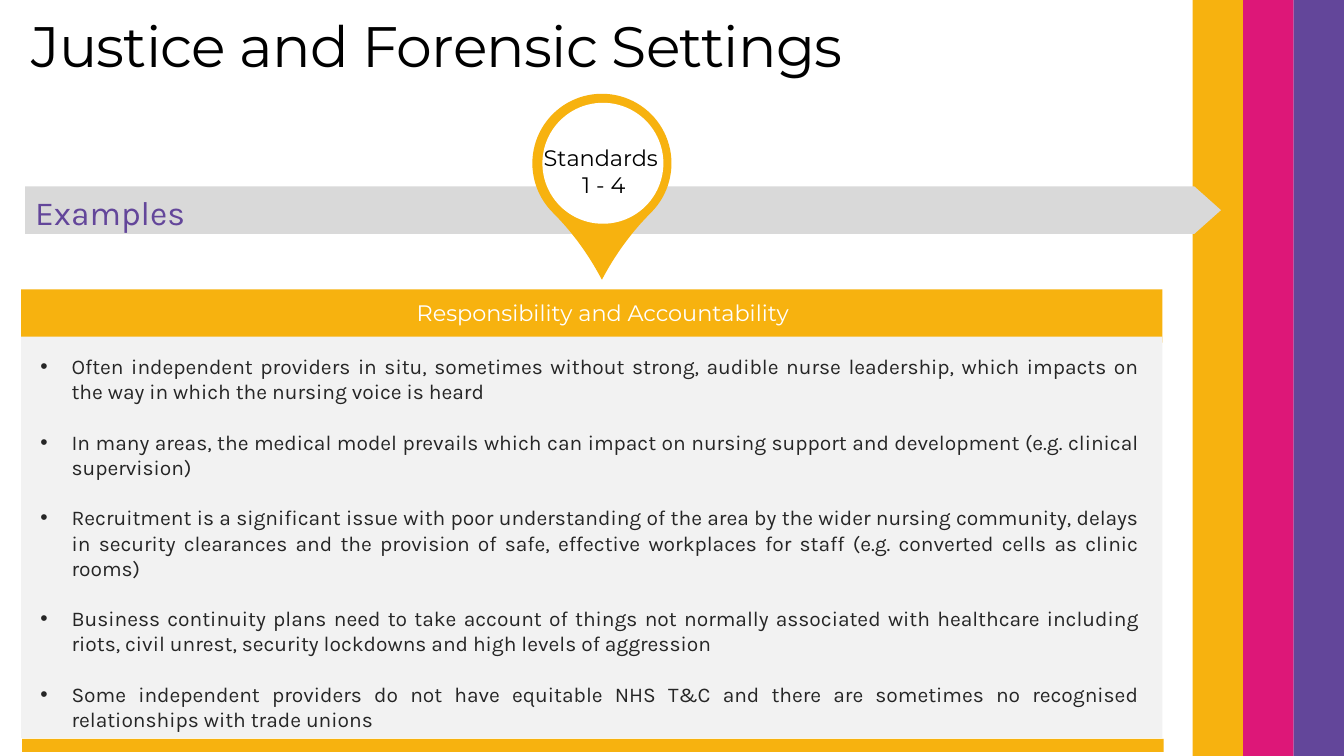
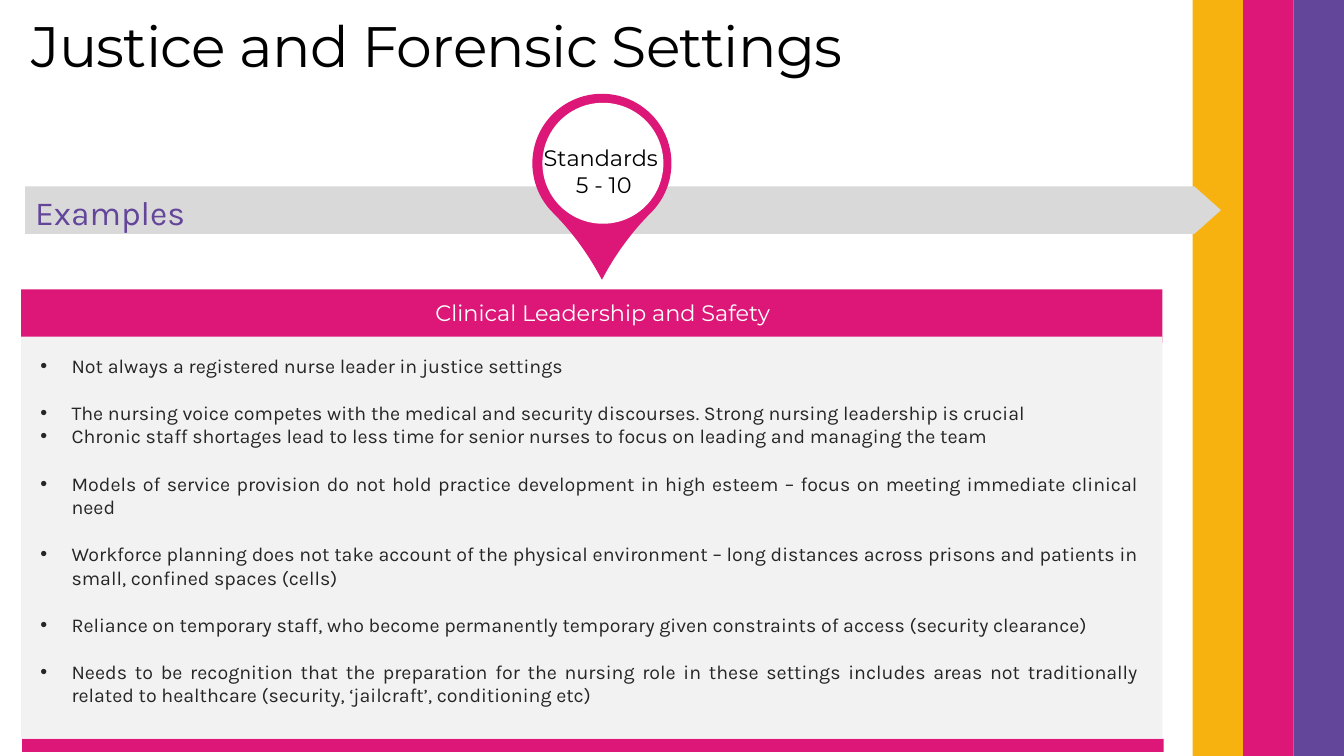
from pptx import Presentation
from pptx import util as u
from pptx.dml import color
from pptx.enum import shapes, text

COLORS = {
    "yellow": "F7B20F", "pink": "DD1778", "purple": "63469A",
    "arrow": "D9D9D9", "panel": "F2F2F2", "body": "262626",
    "black": "000000", "white": "FFFFFF",
}
HEADING_FONT, BODY_FONT = "Montserrat", "Karla"
TITLE = "Justice and Forensic Settings"

SLIDES = [
    {
        "accent": "yellow", "standards": " 1 - 4", "size": 15,
        "heading": "Responsibility and Accountability",
        "groups": [
            ["Often independent providers in situ, sometimes without strong, audible nurse leadership, "
             "which impacts on the way in which the nursing voice is heard"],
            ["In many areas, the medical model prevails which can impact on nursing support and "
             "development (e.g. clinical supervision)"],
            ["Recruitment is a significant issue with poor understanding of the area by the wider nursing "
             "community, delays in security clearances and the provision of safe, effective workplaces "
             "for staff (e.g. converted cells as clinic rooms)"],
            ["Business continuity plans need to take account of things not normally associated with "
             "healthcare including riots, civil unrest, security lockdowns and high levels of aggression"],
            ["Some independent providers do not have equitable NHS T&C and there are sometimes no "
             "recognised relationships with trade unions"],
        ],
    },
    {
        "accent": "pink", "standards": " 5 - 10", "size": 14,
        "heading": "Clinical Leadership and Safety",
        "groups": [
            ["Not always a registered nurse leader in justice settings"],
            ["The nursing voice competes with the medical and security discourses. "
             "Strong nursing leadership is crucial",
             "Chronic staff shortages lead to less time for senior nurses to focus on leading and "
             "managing the team"],
            ["Models of service provision do not hold practice development in high esteem – focus on "
             "meeting immediate clinical need"],
            ["Workforce planning does not take account of the physical environment – long distances "
             "across prisons and patients in small, confined spaces (cells)"],
            ["Reliance on temporary staff, who become permanently temporary given constraints of access "
             "(security clearance)"],
            ["Needs to be recognition that the preparation for the nursing role in these settings "
             "includes areas not traditionally related to healthcare (security, ‘jailcraft’, "
             "conditioning etc)"],
        ],
    },
]


def place(shape, left, top, width, height):
    """Move and size a shape, in inches."""
    shape.left, shape.top = u.Inches(left), u.Inches(top)
    shape.width, shape.height = u.Inches(width), u.Inches(height)


def add_block(slide, kind, box, fill):
    """Add a flat shape without outline or shadow."""
    shape = slide.shapes.add_shape(kind, *map(u.Inches, box))
    shape.shadow.inherit = False
    shape.fill.solid()
    shape.fill.fore_color.rgb = color.RGBColor.from_string(COLORS[fill])
    shape.line.fill.background()
    return shape


def add_run(paragraph, words, font, size, fill):
    """Add one formatted run to a paragraph."""
    run = paragraph.add_run()
    run.text = words
    run.font.name, run.font.size = font, u.Pt(size)
    run.font.color.rgb = color.RGBColor.from_string(COLORS[fill])
    return run


def next_paragraph(frame, index):
    """Return the first paragraph of a frame, or a new one after it."""
    return frame.add_paragraph() if index else frame.paragraphs[0]


def add_label(slide, box, lines, font, size, fill, align=text.PP_ALIGN.CENTER, wrap=False):
    """Add a text box with one paragraph per line."""
    frame = slide.shapes.add_textbox(*map(u.Inches, box)).text_frame
    frame.word_wrap = wrap
    for index, line in enumerate(lines):
        paragraph = next_paragraph(frame, index)
        paragraph.alignment = align
        add_run(paragraph, line, font, size, fill)
    return frame


def add_stripes(slide, left, top, width, height):
    """Draw the vertical colour stripes side by side."""
    names = ("yellow", "pink", "purple")
    stripe = width / len(names)
    for index, name in enumerate(names):
        box = (left + index * stripe, top, stripe, height)
        add_block(slide, shapes.MSO_SHAPE.RECTANGLE, box, name)


def add_title(slide, left, top, width, height):
    """Format the title placeholder."""
    title = slide.shapes.title
    place(title, left, top, width, height)
    frame = title.text_frame
    frame.auto_size = text.MSO_AUTO_SIZE.NONE
    frame.word_wrap = True
    frame.vertical_anchor = text.MSO_ANCHOR.BOTTOM
    paragraph = frame.paragraphs[0]
    paragraph.alignment = text.PP_ALIGN.LEFT
    paragraph.line_spacing = 0.8
    run = add_run(paragraph, TITLE, HEADING_FONT, 40.7, "black")
    run._r.get_or_add_rPr().set("spc", "-50")


def add_arrow(slide, left, top, width, height):
    """Draw the grey arrow with its label."""
    arrow = add_block(slide, shapes.MSO_SHAPE.RIGHT_ARROW, (left, top, width, height), "arrow")
    arrow.adjustments[0], arrow.adjustments[1] = 1, 0.56
    add_label(slide, (left, top, 1.76, 0.5), ["Examples"], BODY_FONT, 24, "purple",
              text.PP_ALIGN.LEFT)


def add_pin(slide, left, top, size, accent, standards):
    """Draw the map pin that names the standards."""
    drop = add_block(slide, shapes.MSO_SHAPE.TEAR, (left, top, size, size), accent)
    drop.adjustments[0] = 1.184
    drop.rotation = 135
    disc = size - 0.18
    add_block(slide, shapes.MSO_SHAPE.OVAL, (left + 0.1, top + 0.09, disc, disc), "white")
    frame = add_label(slide, (left, top + 0.45, size - 0.02, 0.64), ["Standards", standards],
                      HEADING_FONT, 16, "black")
    frame.vertical_anchor = text.MSO_ANCHOR.MIDDLE


def add_panel(slide, left, top, width, height, content):
    """Draw the headed panel and fill its list placeholder."""
    rectangle, accent = shapes.MSO_SHAPE.RECTANGLE, content["accent"]
    add_block(slide, rectangle, (left, top, width, 0.53), accent)
    add_block(slide, rectangle, (left, top + 0.47, width, height - 0.61), "panel")
    add_block(slide, rectangle, (left + 0.01, top + height - 0.13, width, 0.13), accent)
    add_label(slide, (left + 0.52, top + 0.05, 10.5, 0.37), [content["heading"]],
              HEADING_FONT, 16, "white", wrap=True)

    body = slide.placeholders[1]
    place(body, left + 0.09, top + 0.59, width - 0.22, height - 0.7)
    body.element.getparent().append(body.element)
    frame = body.text_frame
    frame.auto_size = text.MSO_AUTO_SIZE.NONE
    size = content["size"]
    items = [(item, group > 0 and place_in_group == 0)
             for group, members in enumerate(content["groups"])
             for place_in_group, item in enumerate(members)]
    for index, (item, gap) in enumerate(items):
        paragraph = next_paragraph(frame, index)
        paragraph.alignment = text.PP_ALIGN.JUSTIFY
        paragraph.space_before = u.Pt(1.2 * size if gap else 0)
        properties = paragraph._p.get_or_add_pPr()
        properties.set("marL", str(u.Inches(0.31)))
        properties.set("indent", str(-u.Inches(0.31)))
        add_run(paragraph, item, BODY_FONT, size, "body")


def add_standards_slide(presentation, content):
    """Build one slide of examples for a range of standards."""
    slide = presentation.slides.add_slide(presentation.slide_layouts[1])
    add_stripes(slide, 11.83, 0, 1.5, 7.5)
    add_title(slide, 0.21, 0.18, 10.6, 0.65)
    add_arrow(slide, 0.25, 1.85, 11.86, 0.47)
    add_pin(slide, 5.28, 0.93, 1.38, content["accent"], content["standards"])
    add_panel(slide, 0.21, 2.87, 11.32, 4.59, content)


def main():
    """Build and save the presentation."""
    presentation = Presentation()
    presentation.slide_width, presentation.slide_height = u.Inches(13.33), u.Inches(7.5)
    for content in SLIDES:
        add_standards_slide(presentation, content)
    presentation.save("out.pptx")


if __name__ == "__main__":
    main()
